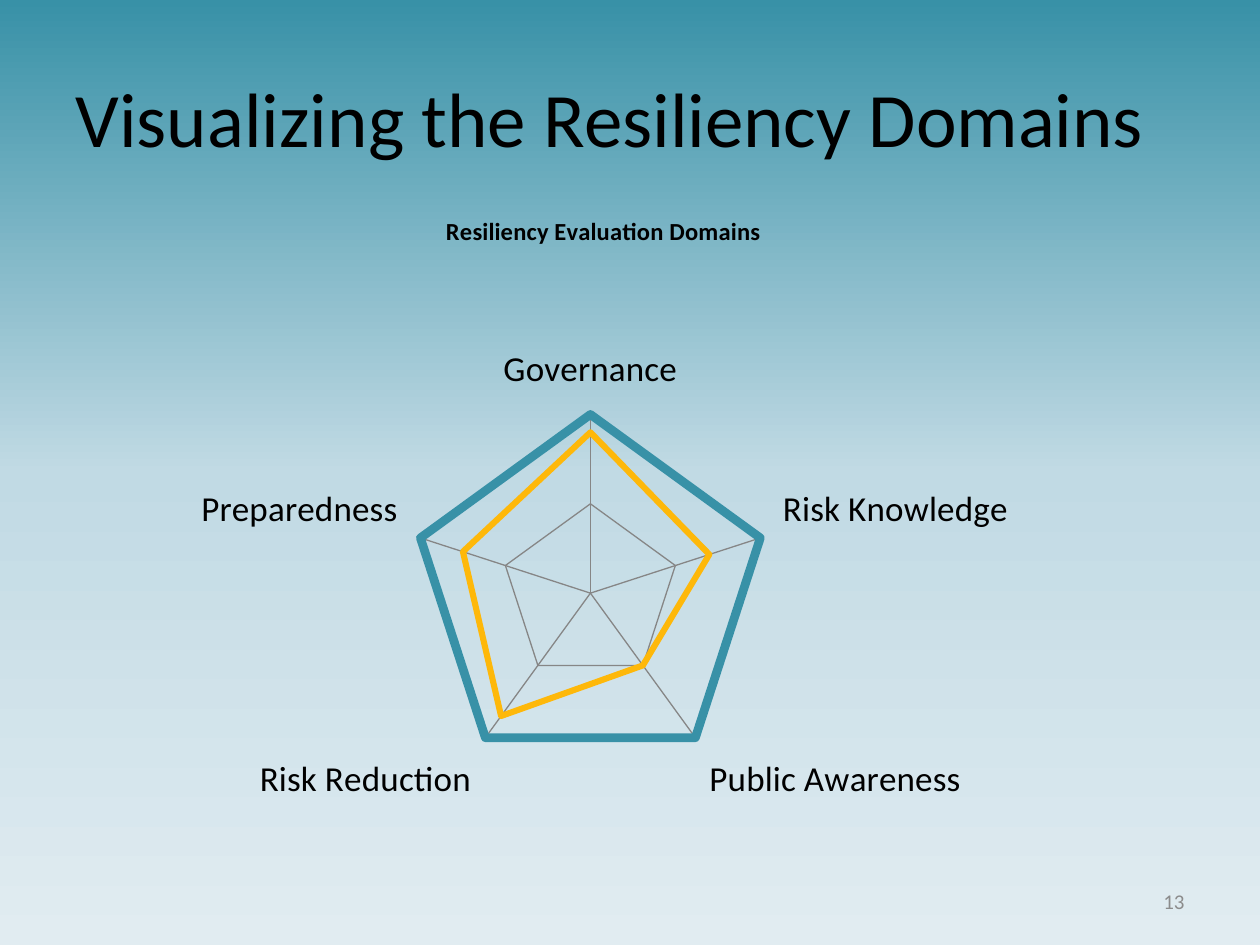
from dataclasses import dataclass

from lxml.etree import SubElement
from pptx import Presentation
from pptx.chart.chart import Chart
from pptx.chart.data import CategoryChartData
from pptx.dml.color import RGBColor
from pptx.enum.chart import XL_CHART_TYPE, XL_TICK_LABEL_POSITION, XL_TICK_MARK
from pptx.enum.text import MSO_ANCHOR, PP_ALIGN
from pptx.oxml import parse_xml
from pptx.oxml.ns import nsdecls, qn
from pptx.slide import Slide
from pptx.text.text import Font
from pptx.util import Inches, Pt

FONT_NAME = "Calibri"
BLACK = RGBColor(0x00, 0x00, 0x00)
GREY = RGBColor(0x8C, 0x8C, 0x8C)
GRID_GREY = RGBColor(0x86, 0x86, 0x86)
TEAL = RGBColor(0x38, 0x91, 0xA7)
AMBER = RGBColor(0xFE, 0xB8, 0x0A)
PALE_BLUE = RGBColor(0xC1, 0xDA, 0xE4)
ICE_BLUE = RGBColor(0xE1, 0xEC, 0xF1)
BACKGROUND_STOPS = ((0, TEAL), (50, PALE_BLUE), (100, ICE_BLUE))

DOMAINS = ("Governance", "Risk Knowledge", "Public Awareness",
           "Risk Reduction", "Preparedness")
PLOT_AREA = {"x": 0.28, "y": 0.32, "w": 0.41, "h": 0.51}


@dataclass(frozen=True)
class RadarSeries:
    name: str
    values: tuple[int, ...]
    color: RGBColor
    width: float


RADAR_SERIES = (
    RadarSeries("Series 1", (100, 100, 100, 100, 100), TEAL, 5),
    RadarSeries("Series 2", (90, 70, 50, 85, 75), AMBER, 3.5),
)


def format_font(font: Font, size: float, color: RGBColor = BLACK, bold: bool = False) -> None:
    font.name = FONT_NAME
    font.size = Pt(size)
    font.bold = bold
    font.color.rgb = color


def set_background(slide: Slide) -> None:
    """Fill the background from top to bottom through BACKGROUND_STOPS."""
    fill = slide.background.fill
    fill.gradient()
    stops = "".join(
        f'<a:gs pos="{percent * 1000}"><a:srgbClr val="{color}"/></a:gs>'
        for percent, color in BACKGROUND_STOPS
    )
    gradient = parse_xml(
        f'<a:gradFill {nsdecls("a")} rotWithShape="1"><a:gsLst>{stops}</a:gsLst>'
        '<a:lin ang="5400000" scaled="0"/></a:gradFill>'
    )
    current = slide.element.find(".//" + qn("a:gradFill"))
    current.getparent().replace(current, gradient)


def add_title(slide: Slide) -> None:
    title = slide.shapes.title
    title.left, title.top = Inches(0.5), Inches(0.3)
    title.width, title.height = Inches(9), Inches(1.25)
    title.text_frame.text = "Visualizing the Resiliency Domains"
    title.text_frame.vertical_anchor = MSO_ANCHOR.MIDDLE
    paragraph = title.text_frame.paragraphs[0]
    paragraph.alignment = PP_ALIGN.LEFT
    format_font(paragraph.runs[0].font, 44)


def add_page_number(slide: Slide) -> None:
    box = slide.shapes.add_textbox(Inches(7.17), Inches(6.95), Inches(2.33), Inches(0.4))
    text_frame = box.text_frame
    text_frame.word_wrap = True
    text_frame.vertical_anchor = MSO_ANCHOR.MIDDLE
    text_frame.text = "13"
    paragraph = text_frame.paragraphs[0]
    paragraph.alignment = PP_ALIGN.RIGHT
    format_font(paragraph.runs[0].font, 12, GREY)


def place_plot_area(chart: Chart) -> None:
    """Set the inner plot area as fractions of the chart."""
    plot_area = chart.element.find(".//" + qn("c:plotArea"))
    for layout in plot_area.findall(qn("c:layout")):
        plot_area.remove(layout)
    layout = parse_xml(f'<c:layout {nsdecls("c")}/>')
    plot_area.insert(0, layout)
    manual = SubElement(layout, qn("c:manualLayout"))
    SubElement(manual, qn("c:layoutTarget")).set("val", "inner")
    for side in ("x", "y"):
        SubElement(manual, qn(f"c:{side}Mode")).set("val", "edge")
    for side, fraction in PLOT_AREA.items():
        SubElement(manual, qn(f"c:{side}")).set("val", str(fraction))


def format_axes(chart: Chart) -> None:
    for axis in (chart.category_axis, chart.value_axis):
        axis.major_tick_mark = XL_TICK_MARK.NONE
        axis.minor_tick_mark = XL_TICK_MARK.NONE
        axis.has_major_gridlines = True
        grid_line = axis.major_gridlines.format.line
        grid_line.color.rgb = GRID_GREY
        grid_line.width = Pt(0.75)

    chart.category_axis.format.line.fill.background()
    format_font(chart.category_axis.tick_labels.font, 20)

    value_axis = chart.value_axis
    value_axis.minimum_scale = 0
    value_axis.maximum_scale = 100
    value_axis.major_unit = 50
    value_axis.tick_label_position = XL_TICK_LABEL_POSITION.NONE
    value_axis.format.line.color.rgb = GRID_GREY
    value_axis.format.line.width = Pt(0.75)


def add_radar_chart(slide: Slide) -> None:
    chart_data = CategoryChartData(number_format="General")
    chart_data.categories = DOMAINS
    for radar_series in RADAR_SERIES:
        chart_data.add_series(radar_series.name, radar_series.values)
    chart = slide.shapes.add_chart(
        XL_CHART_TYPE.RADAR, Inches(1.33), Inches(1.5), Inches(6.92), Inches(5.58), chart_data
    ).chart
    format_font(chart.font, 10)
    chart.has_legend = False
    chart.has_title = True
    title_frame = chart.chart_title.text_frame
    title_frame.text = "Resiliency Evaluation Domains"
    format_font(title_frame.paragraphs[0].runs[0].font, 14, bold=True)
    chart.chart_title.include_in_layout = False

    plot = chart.plots[0]
    plot.vary_by_categories = False
    for series, radar_series in zip(plot.series, RADAR_SERIES):
        series.smooth = False
        series.format.line.color.rgb = radar_series.color
        series.format.line.width = Pt(radar_series.width)
    format_axes(chart)
    place_plot_area(chart)


def main() -> None:
    presentation = Presentation()
    presentation.slide_width = Inches(10)
    presentation.slide_height = Inches(7.5)
    slide = presentation.slides.add_slide(presentation.slide_layouts[5])
    set_background(slide)
    add_page_number(slide)
    add_title(slide)
    add_radar_chart(slide)
    presentation.save("out.pptx")


if __name__ == "__main__":
    main()
